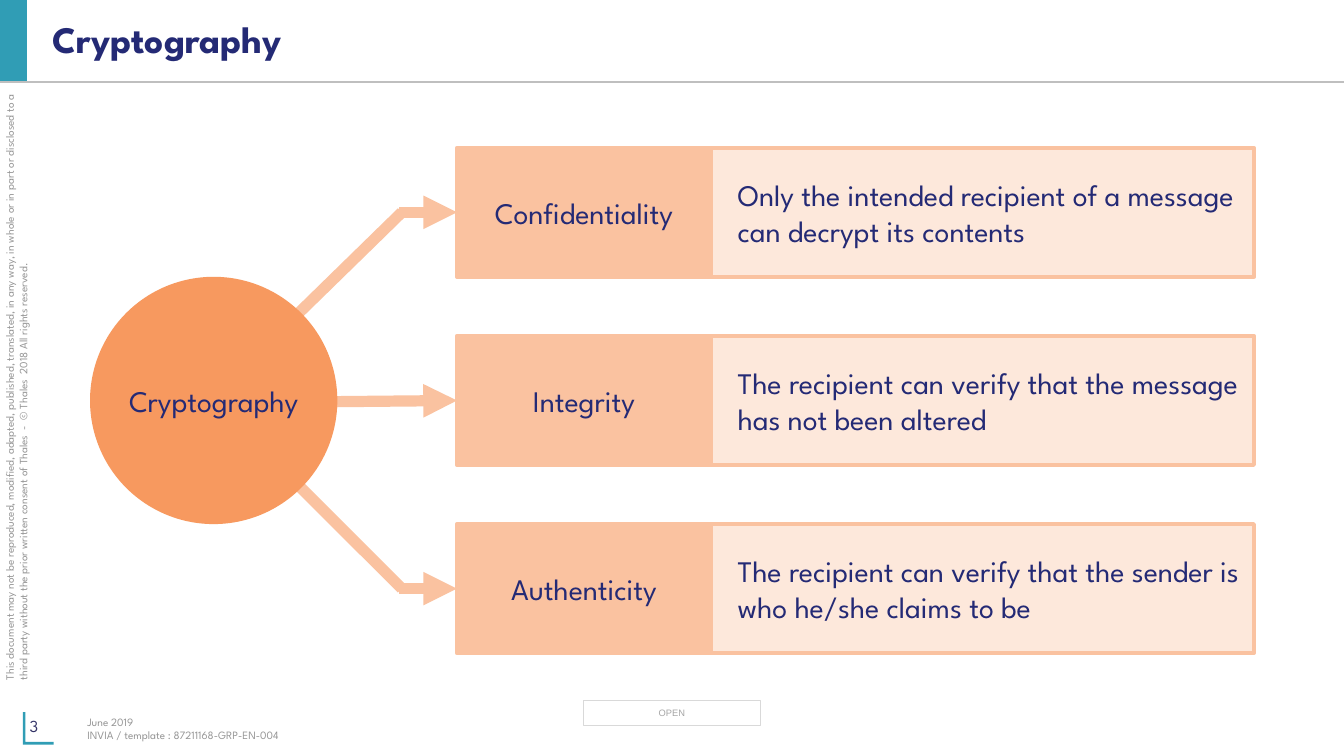
from lxml import etree
from pptx import Presentation
from pptx import util as u
from pptx.dml.color import RGBColor
from pptx.enum import shapes, text
from pptx.oxml.ns import qn

WIDTH = 10
HEIGHT = WIDTH * 9 / 16
FONT = "League Spartan"
COLORS = {
    "teal": "309DB5",
    "navy": "242A75",
    "number": "333366",
    "grey": "969696",
    "rule": "BFBFBF",
    "badge_line": "D9D9D9",
    "badge_text": "A6A6A6",
    "white": "FFFFFF",
    "orange": "F7995F",
    "peach": "FAC2A0",
    "pale": "FDE8DB",
}
GOALS = [
    ("Confidentiality", "Only the intended recipient of a message can decrypt its contents"),
    ("Integrity", "The recipient can verify that the message has not been altered"),
    ("Authenticity", "The recipient can verify that the sender is who he/she claims to be"),
]
ROW_TOP, ROW_STEP, ROW_HEIGHT = 1.1, 1.4, 0.96
LABEL_LEFT, LABEL_WIDTH, DETAIL_WIDTH = 3.4, 1.89, 4.04
ELBOW_X = 2.98
BRANCH_STARTS = [(2.15, 2.4), (2.38, 2.99), (2.17, 3.56)]
NOTICE = (
    "This document may not be reproduced, modified, adapted, published, translated, "
    "in any way, in whole or in part or disclosed to a third party without the prior "
    "written consent of Thales  -  © Thales  2018 All rights reserved."
)


def color(name):
    return RGBColor.from_string(COLORS[name])


def inches(values):
    return [u.Inches(value) for value in values]


def write(shape, words, size, ink, align=text.PP_ALIGN.LEFT, font=FONT,
          bold=False, insets=(0.1, 0.05), wrap=True, indent=0):
    frame = shape.text_frame
    frame.word_wrap = wrap
    frame.vertical_anchor = text.MSO_ANCHOR.MIDDLE
    frame.margin_left = frame.margin_right = u.Inches(insets[0])
    frame.margin_top = frame.margin_bottom = u.Inches(insets[1])
    paragraph = frame.paragraphs[0]
    paragraph.text = words
    paragraph.alignment = align
    if indent:
        properties = paragraph._p.get_or_add_pPr()
        properties.set("marL", str(u.Inches(indent)))
        properties.set("indent", "0")
    paragraph.font.name = font
    paragraph.font.size = u.Pt(size)
    paragraph.font.bold = bold
    paragraph.font.color.rgb = color(ink)
    return paragraph


def add_text(slide, box, words, size, ink, **style):
    shape = slide.shapes.add_textbox(*inches(box))
    write(shape, words, size, ink, **style)
    return shape


def paint(shape, fill, line=None, width=0):
    shape.shadow.inherit = False
    shape.fill.solid()
    shape.fill.fore_color.rgb = color(fill)
    if line:
        shape.line.color.rgb = color(line)
        shape.line.width = u.Pt(width)
    else:
        shape.line.fill.background()


def add_block(slide, kind, box, fill, line=None, width=0):
    shape = slide.shapes.add_shape(kind, *inches(box))
    paint(shape, fill, line, width)
    return shape


def add_line(slide, start, end, ink, width, target=None):
    line = slide.shapes.add_connector(
        shapes.MSO_CONNECTOR.STRAIGHT, *inches((*start, *end)))
    line.line.color.rgb = color(ink)
    line.line.width = u.Pt(width)
    if target is not None:
        line.end_connect(target, 1)
        outline = line.line._get_or_add_ln()
        etree.SubElement(outline, qn("a:tailEnd"), type="triangle")
    etree.SubElement(line._element.spPr, qn("a:effectLst"))


def add_corner(slide, left, top, width, height, thickness):
    right, bottom = left + width, top + height
    points = [
        (left, top), (left, bottom), (right, bottom),
        (right, bottom - thickness), (left + thickness, bottom - thickness),
        (left + thickness, top),
    ]
    corners = [inches(point) for point in points]
    builder = slide.shapes.build_freeform(*corners[0])
    builder.add_line_segments(corners[1:], close=True)
    paint(builder.convert_to_shape(), "teal")


def add_badge(slide):
    badge = add_block(slide, shapes.MSO_SHAPE.RECTANGLE, (4.34, 5.21, 1.32, 0.19),
                      "white", "badge_line", 0.5)
    shade = badge._element.spPr.find(qn("a:solidFill"))[0]
    etree.SubElement(shade, qn("a:alpha"), val="50000")
    write(badge, "OPEN", 5, "badge_text", align=text.PP_ALIGN.CENTER, font="Arial")


def add_frame(slide):
    add_block(slide, shapes.MSO_SHAPE.RECTANGLE, (0, 0, 0.2, 0.61), "teal")
    notice = add_text(slide, (-2.1, 2.74, 4.44, 0.2), NOTICE, 6, "grey", insets=(0, 0))
    notice.rotation = 270
    add_text(slide, (0.15, 5.25, 0.86, 0.3), "3", 9, "number", insets=(0.07, 0.04))
    add_line(slide, (0, 0.61), (WIDTH, 0.61), "rule", 0.75)
    add_text(slide, (0.65, 5.32, 5.99, 0.2),
             "June 2019\vINVIA / template : 87211168-GRP-EN-004", 6, "grey", insets=(0, 0))
    add_corner(slide, 0.17, 5.3, 0.23, 0.24, 0.02)
    add_badge(slide)


def add_title(slide, words):
    title = slide.shapes.add_textbox(*inches((0.29, 0, 9.49, 0.61)))
    write(title, words, 20, "navy", bold=True).line_spacing = 0.9


def add_goal(slide, row, label, detail):
    top = ROW_TOP + row * ROW_STEP
    label_box = add_block(slide, shapes.MSO_SHAPE.RECTANGLE,
                          (LABEL_LEFT, top, LABEL_WIDTH, ROW_HEIGHT), "peach", "peach", 2.25)
    write(label_box, label, 16, "navy", align=text.PP_ALIGN.CENTER)
    detail_box = add_block(slide, shapes.MSO_SHAPE.RECTANGLE,
                           (LABEL_LEFT + LABEL_WIDTH, top, DETAIL_WIDTH, ROW_HEIGHT),
                           "pale", "peach", 2.25)
    write(detail_box, detail, 16, "navy", indent=0.1)
    return label_box


def add_branch(slide, row, start, label_box):
    middle = ROW_TOP + row * ROW_STEP + ROW_HEIGHT / 2
    if row != 1:
        add_line(slide, start, (ELBOW_X + 0.01, middle), "peach", 6)
        start = (ELBOW_X - 0.01, middle)
    add_line(slide, start, (LABEL_LEFT, middle), "peach", 6, label_box)


def add_hub(slide, words):
    hub = add_block(slide, shapes.MSO_SHAPE.OVAL, (0.67, 2.06, 1.84, 1.84), "orange")
    write(hub, words, 16, "navy", align=text.PP_ALIGN.CENTER, insets=(0, 0), wrap=False)


def main():
    presentation = Presentation()
    presentation.slide_width = u.Inches(WIDTH)
    presentation.slide_height = u.Inches(HEIGHT)
    slide = presentation.slides.add_slide(presentation.slide_layouts[6])
    add_frame(slide)
    add_title(slide, "Cryptography")
    label_boxes = [add_goal(slide, row, *goal) for row, goal in enumerate(GOALS)]
    for row, (start, label_box) in enumerate(zip(BRANCH_STARTS, label_boxes)):
        add_branch(slide, row, start, label_box)
    add_hub(slide, "Cryptography")
    presentation.save("out.pptx")


if __name__ == "__main__":
    main()
